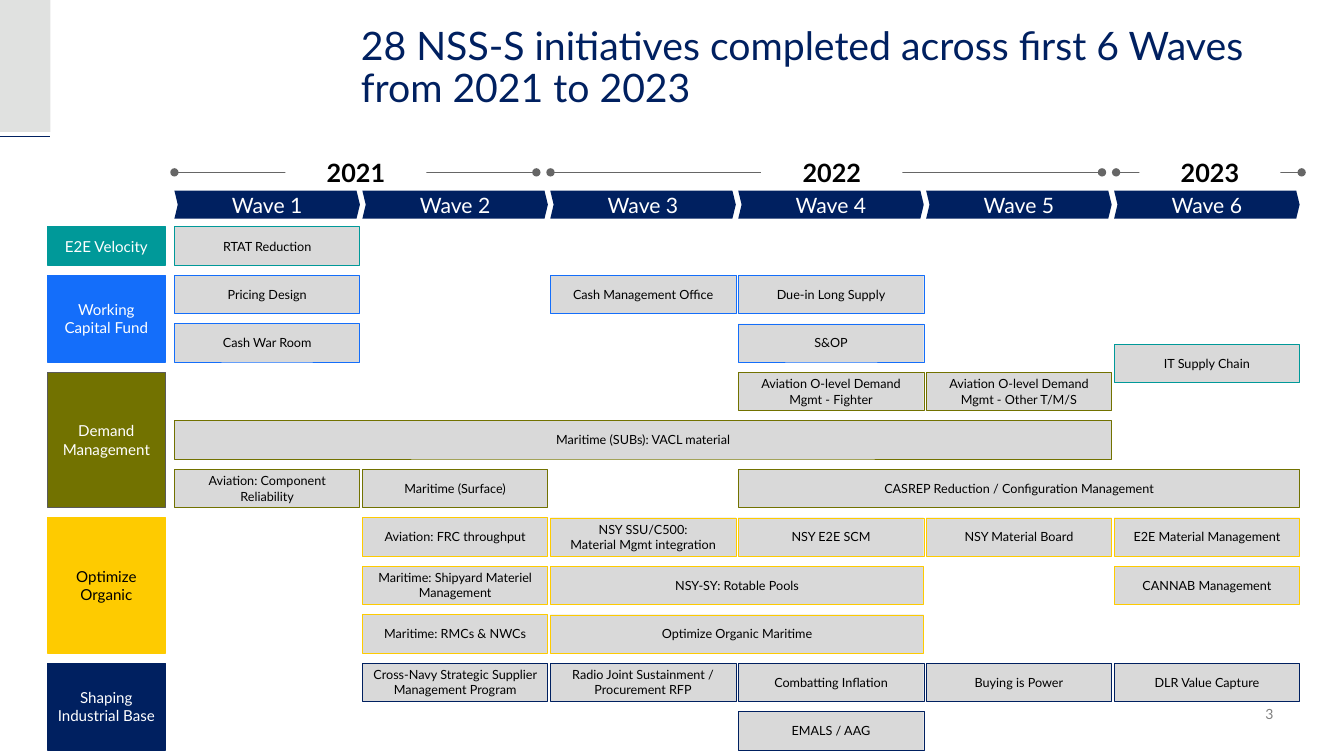
"""Build the slide of initiatives by wave and work stream."""
import pptx
import pptx.util
import pptx.dml.color
import pptx.enum.shapes
import pptx.enum.text
import pptx.oxml
import pptx.oxml.ns

RGBColor = pptx.dml.color.RGBColor
Inches = pptx.util.Inches
Pt = pptx.util.Pt
SHAPE = pptx.enum.shapes.MSO_SHAPE
ANCHOR = pptx.enum.text.MSO_ANCHOR
ALIGN = pptx.enum.text.PP_ALIGN

NAVY = RGBColor(0x00, 0x20, 0x60)
TEAL = RGBColor(0x00, 0x99, 0x99)
BLUE = RGBColor(0x14, 0x6E, 0xFA)
OLIVE = RGBColor(0x72, 0x72, 0x00)
YELLOW = RGBColor(0xFE, 0xCB, 0x00)
WHITE = RGBColor(0xFF, 0xFF, 0xFF)
BLACK = RGBColor(0x00, 0x00, 0x00)
TILE_GRAY = RGBColor(0xD9, 0xD9, 0xD9)
CORNER_GRAY = RGBColor(0xE0, 0xE1, 0xE0)
LINE_GRAY = RGBColor(0x66, 0x66, 0x66)
EDGE_GRAY = RGBColor(0x5A, 0x5A, 0x5A)
NUMBER_GRAY = RGBColor(0x80, 0x80, 0x80)

FONT = "Lato"
GRID_LEFT, GRID_TOP = 1.73, 2.25
COL_STEP, ROW_STEP = 9.32 / 5, 4.81 / 10
TILE_W, TILE_H = 1.84, 0.38
LABEL_LEFT, LABEL_W = 0.47, 1.17
WAVE_TOP, WAVE_H = 1.89, 0.28
YEAR_Y, YEAR_W, YEAR_H = 1.71, 1.4, 0.4
THICK, THIN = 0.63, 0.25

YEARS = [
    ("2021", 1.73, 5.32, 3.53),
    ("2022", 5.46, 10.93, 8.25),
    ("2023", 11.07, 12.91, 12),
]

# Stream: label, fill, edge, text colour, first row, row count
STREAMS = [
    ("E2E Velocity", TEAL, TEAL, WHITE, 0, 1),
    ("Working Capital Fund", BLUE, BLUE, WHITE, 1, 2),
    ("Demand Management", OLIVE, EDGE_GRAY, WHITE, 3, 3),
    ("Optimize Organic", YELLOW, YELLOW, BLACK, 6, 3),
    ("Shaping Industrial Base", NAVY, NAVY, WHITE, 9, 2),
]

# Initiative: text, first column, row, column count, edge weight
INITIATIVES = {
    TEAL: [
        ("RTAT Reduction", 0, 0, 1, THICK),
        ("IT Supply Chain", 5, 2.43, 1, THICK),
    ],
    BLUE: [
        ("Pricing Design", 0, 1, 1, THICK),
        ("Cash War Room", 0, 2, 1, THICK),
        ("Cash Management Office", 2, 1, 1, THIN),
        ("Due-in Long Supply", 3, 1, 1, THIN),
        ("S&OP", 3, 2, 1, THIN),
    ],
    OLIVE: [
        ("Aviation O-level Demand Mgmt - Fighter", 3, 3, 1, THIN),
        ("Aviation O-level Demand Mgmt - Other T/M/S", 4, 3, 1, THIN),
        ("Maritime (SUBs): VACL material", 0, 4, 5, THICK),
        ("Aviation: Component Reliability", 0, 5, 1, THICK),
        ("Maritime (Surface)", 1, 5, 1, THICK),
        ("CASREP Reduction / Configuration Management", 3, 5, 3, THIN),
    ],
    YELLOW: [
        ("Aviation: FRC throughput", 1, 6, 1, THICK),
        ("NSY SSU/C500:\nMaterial Mgmt integration", 2, 6, 1, THIN),
        ("NSY E2E SCM", 3, 6, 1, THIN),
        ("NSY Material Board", 4, 6, 1, THIN),
        ("E2E Material Management", 5, 6, 1, THIN),
        ("Maritime: Shipyard Materiel Management", 1, 7, 1, THICK),
        ("NSY-SY: Rotable Pools", 2, 7, 2, THIN),
        ("CANNAB Management", 5, 7, 1, THICK),
        ("Maritime: RMCs & NWCs", 1, 8, 1, THICK),
        ("Optimize Organic Maritime", 2, 8, 2, THIN),
    ],
    NAVY: [
        ("Cross-Navy Strategic Supplier Management Program", 1, 9, 1, THICK),
        ("Radio Joint Sustainment / Procurement RFP", 2, 9, 1, THIN),
        ("Combatting Inflation", 3, 9, 1, THIN),
        ("Buying is Power", 4, 9, 1, THIN),
        ("DLR Value Capture", 5, 9, 1, THIN),
        ("EMALS / AAG", 3, 10, 1, THIN),
    ],
}


def col_x(col):
    """Return the left edge of a wave column."""
    return GRID_LEFT + col * COL_STEP


def row_y(row):
    """Return the top edge of an initiative row."""
    return GRID_TOP + row * ROW_STEP


def write(sp, text, size, color, align=ALIGN.CENTER, anchor=ANCHOR.MIDDLE, inset=(0, 0), bold=False):
    """Fill a shape with evenly formatted text."""
    tf = sp.text_frame
    tf.text = text
    tf.word_wrap = True
    tf.vertical_anchor = anchor
    tf.margin_left = tf.margin_right = Inches(inset[0])
    tf.margin_top = tf.margin_bottom = Inches(inset[1])
    for p in tf.paragraphs:
        p.alignment = align
        for r in p.runs:
            r.font.name, r.font.size, r.font.bold = FONT, Pt(size), bold
            r.font.color.rgb = color


def add_box(s, box, fill, edge=None, weight=0, kind=SHAPE.RECTANGLE):
    """Add a filled preset shape with an optional edge."""
    sp = s.shapes.add_shape(kind, *map(Inches, box))
    sp.shadow.inherit = False
    sp.fill.solid()
    sp.fill.fore_color.rgb = fill
    if edge is None:
        sp.line.fill.background()
    else:
        sp.line.color.rgb = edge
        sp.line.width = Pt(weight)
    return sp


def add_rule(s, left, right, y, color, dots=False):
    """Add a horizontal line, with round ends if wanted."""
    ends = map(Inches, (left, y, right, y))
    cx = s.shapes.add_connector(pptx.enum.shapes.MSO_CONNECTOR.STRAIGHT, *ends)
    cx.line.color.rgb = color
    cx.line.width = Pt(0.75)
    if dots:
        for tag in ("a:headEnd", "a:tailEnd"):
            end = pptx.oxml.ns.qn(tag)
            cx.line._get_or_add_ln().append(cx._element.makeelement(end, {"type": "oval"}))
    effects = pptx.oxml.ns.qn("a:effectLst")
    cx._element.spPr.append(cx._element.makeelement(effects, {}))


def add_text(s, box, text, size, color, align):
    """Add a bottom-anchored text box."""
    sp = s.shapes.add_textbox(*map(Inches, box))
    write(sp, text, size, color, align, ANCHOR.BOTTOM)
    return sp


def add_year(s, year, left, right, center):
    """Add a year span with its heading."""
    add_rule(s, left, right, YEAR_Y, LINE_GRAY, dots=True)
    box = (center - YEAR_W / 2, YEAR_Y - YEAR_H / 2, YEAR_W, YEAR_H)
    write(add_box(s, box, WHITE), year, 18, BLACK, inset=(0.1, 0.05), bold=True)


def add_wave(s, col):
    """Add the chevron heading of a wave column."""
    box = (col_x(col), WAVE_TOP, TILE_W, WAVE_H)
    sp = add_box(s, box, NAVY, kind=SHAPE.CHEVRON)
    sp.adjustments[0] = 0.12
    write(sp, f"Wave {col + 1}", 15.1, WHITE)


def add_stream(s, label, fill, edge, color, row, rows):
    """Add the label block of a work stream."""
    box = (LABEL_LEFT, row_y(row), LABEL_W, (rows - 1) * ROW_STEP + TILE_H)
    write(add_box(s, box, fill, edge, 0.9), label, 10.8, color, inset=(0.09, 0.04))


def add_initiative(s, edge, text, col, row, cols, weight):
    """Add an initiative tile spanning its waves."""
    box = (col_x(col), row_y(row), (cols - 1) * COL_STEP + TILE_W, TILE_H)
    write(add_box(s, box, TILE_GRAY, edge, weight), text, 9, BLACK, inset=(0.06, 0.03))


def main():
    """Build and save the slide."""
    prs = pptx.Presentation()
    prs.slide_width, prs.slide_height = Inches(13.33), Inches(7.5)
    s = prs.slides.add_slide(prs.slide_layouts[6])
    add_box(s, (0, 0, 0.5, 1.31), CORNER_GRAY)
    add_rule(s, 0, 0.5, 1.35, NAVY)
    title = "28 NSS-S initiatives completed across first 6 Waves from 2021 to 2023"
    sp = add_text(s, (3.58, 0.25, 9.25, 0.85), title, 28, NAVY, ALIGN.LEFT)
    sp.text_frame.paragraphs[0].line_spacing = 0.9
    for year in YEARS:
        add_year(s, *year)
    for col in range(6):
        add_wave(s, col)
    for stream in STREAMS:
        add_stream(s, *stream)
    for edge, initiatives in INITIATIVES.items():
        for initiative in initiatives:
            add_initiative(s, edge, *initiative)
    add_text(s, (12.21, 7, 0.42, 0.17), "3", 10, NUMBER_GRAY, ALIGN.RIGHT)
    prs.save("out.pptx")


if __name__ == "__main__":
    main()
